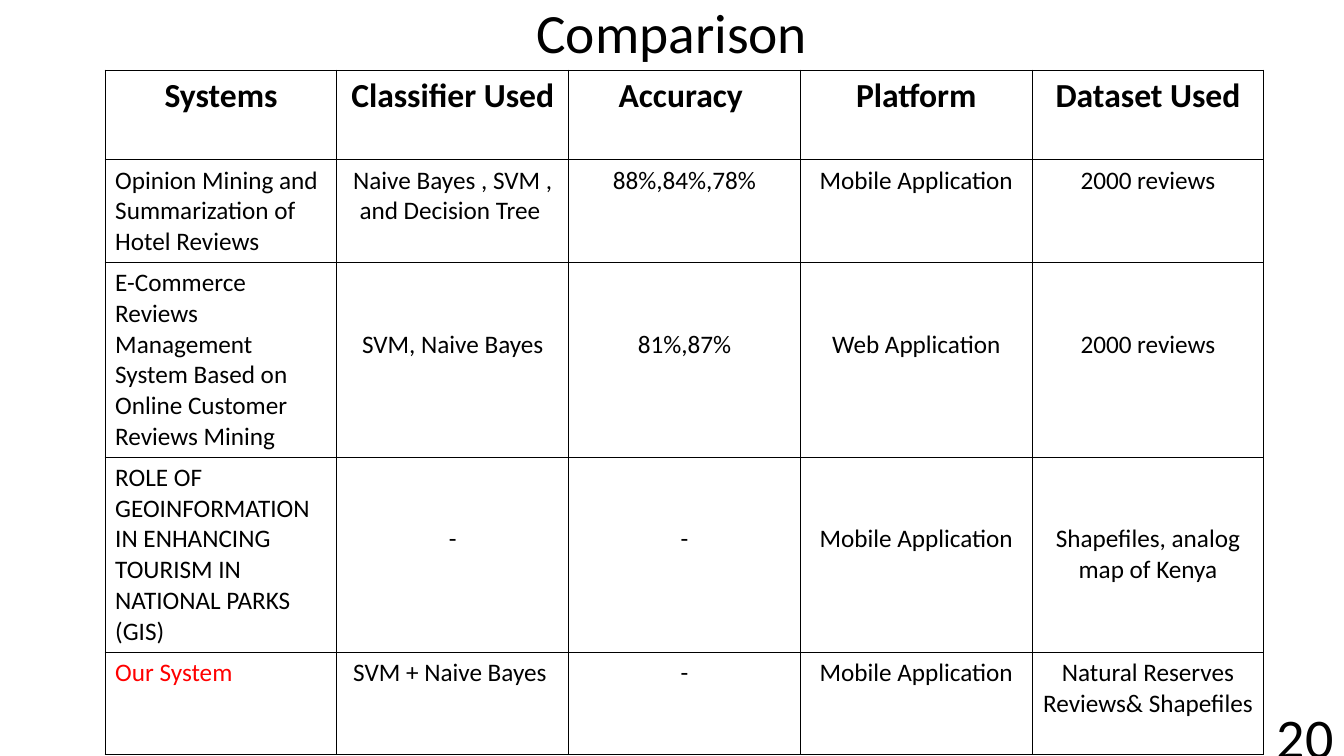
from dataclasses import dataclass

from lxml import etree
from pptx import Presentation
from pptx import util as u
from pptx.dml.color import RGBColor
from pptx.enum import text
from pptx.oxml import ns

FONT = "Calibri"
BLACK, WHITE, RED = "000000", "FFFFFF", "FF0000"
LEFT, CENTER, RIGHT = text.PP_ALIGN.LEFT, text.PP_ALIGN.CENTER, text.PP_ALIGN.RIGHT
COLUMN_WIDTH = 5.84
TOP_MARGIN = 0.13
LOWERED_MARGIN = 1.68  # brings short entries to the middle of tall rows


@dataclass
class Label:
    words: str
    left: float
    top: float
    width: float
    height: float
    size: float
    align: text.PP_ALIGN
    line_spacing: float = 1.0


@dataclass
class Row:
    height: float
    entries: tuple[str, ...]
    top_margin: float = TOP_MARGIN
    name_color: str = BLACK


LABELS = [
    Label("Comparison", 8.18, 0, 17.5, 1.78, 39.6, CENTER, 0.9),
    Label("20", 26.24, 18.03, 7.62, 1.02, 40, RIGHT),
]

HEADER = Row(2.26, ("Systems", "Classifier Used", "Accuracy ", "Platform", "Dataset Used"))
SYSTEMS = [
    Row(2.58, ("Opinion Mining and Summarization of Hotel Reviews",
               "Naive Bayes , SVM , and Decision Tree ", "88%,84%,78%",
               "Mobile Application", "2000 reviews")),
    Row(4.91, ("E-Commerce Reviews Management System Based on Online Customer Reviews Mining",
               "SVM, Naive Bayes", "81%,87%", "Web Application", "2000 reviews"),
        LOWERED_MARGIN),
    Row(4.91, ("ROLE OF GEOINFORMATION IN ENHANCING TOURISM IN NATIONAL PARKS\n(GIS)",
               "-", "-", "Mobile Application", "Shapefiles, analog map of Kenya"),
        LOWERED_MARGIN),
    Row(2.58, ("Our System", "SVM + Naive Bayes ", "-", "Mobile Application",
               "Natural Reserves Reviews& Shapefiles"), name_color=RED),
]


def color(value: str) -> RGBColor:
    return RGBColor.from_string(value)


def write(frame, words: str, size: float, align: text.PP_ALIGN,
          ink: str = BLACK, bold: bool = False, line_spacing: float = 1.0) -> None:
    for index, line in enumerate(words.split("\n")):
        paragraph = frame.add_paragraph() if index else frame.paragraphs[0]
        paragraph.alignment = align
        paragraph.line_spacing = line_spacing
        run = paragraph.add_run()
        run.text = line
        run.font.name = FONT
        run.font.size = u.Pt(size)
        run.font.bold = bold
        run.font.color.rgb = color(ink)


def add_label(slide, label: Label) -> None:
    box = slide.shapes.add_textbox(u.Cm(label.left), u.Cm(label.top),
                                   u.Cm(label.width), u.Cm(label.height))
    frame = box.text_frame
    frame.word_wrap = True
    frame.vertical_anchor = text.MSO_ANCHOR.MIDDLE
    write(frame, label.words, label.size, label.align, line_spacing=label.line_spacing)


def add_borders(cell) -> None:
    properties = cell._tc.get_or_add_tcPr()
    for position, side in enumerate(("lnL", "lnR", "lnT", "lnB")):
        line = etree.Element(ns.qn(f"a:{side}"), w=str(u.Pt(1)))
        fill = etree.SubElement(line, ns.qn("a:solidFill"))
        etree.SubElement(fill, ns.qn("a:srgbClr"), val=BLACK)
        properties.insert(position, line)


def add_comparison(slide, rows: list[Row]) -> None:
    columns = len(HEADER.entries)
    table = slide.shapes.add_table(
        len(rows), columns, u.Cm(2.65), u.Cm(1.77),
        u.Cm(columns * COLUMN_WIDTH), u.Cm(sum(row.height for row in rows))).table
    table.first_row = table.horz_banding = False
    for column in table.columns:
        column.width = u.Cm(COLUMN_WIDTH)

    for row_index, row in enumerate(rows):
        table.rows[row_index].height = u.Cm(row.height)
        is_header = row is HEADER
        for column_index, words in enumerate(row.entries):
            cell = table.cell(row_index, column_index)
            is_name = column_index == 0
            cell.margin_top = u.Cm(TOP_MARGIN if is_name else row.top_margin)
            cell.fill.solid()
            cell.fill.fore_color.rgb = color(WHITE)
            add_borders(cell)
            write(cell.text_frame, words, 24 if is_header else 18,
                  LEFT if is_name and not is_header else CENTER,
                  row.name_color if is_name else BLACK, is_header)


def main() -> None:
    presentation = Presentation()
    presentation.slide_width = u.Cm(33.87)
    presentation.slide_height = u.Cm(19.05)
    slide = presentation.slides.add_slide(presentation.slide_layouts[6])

    # Comparison table
    add_comparison(slide, [HEADER, *SYSTEMS])

    # Title and page number
    for label in LABELS:
        add_label(slide, label)

    presentation.save("out.pptx")


if __name__ == "__main__":
    main()
